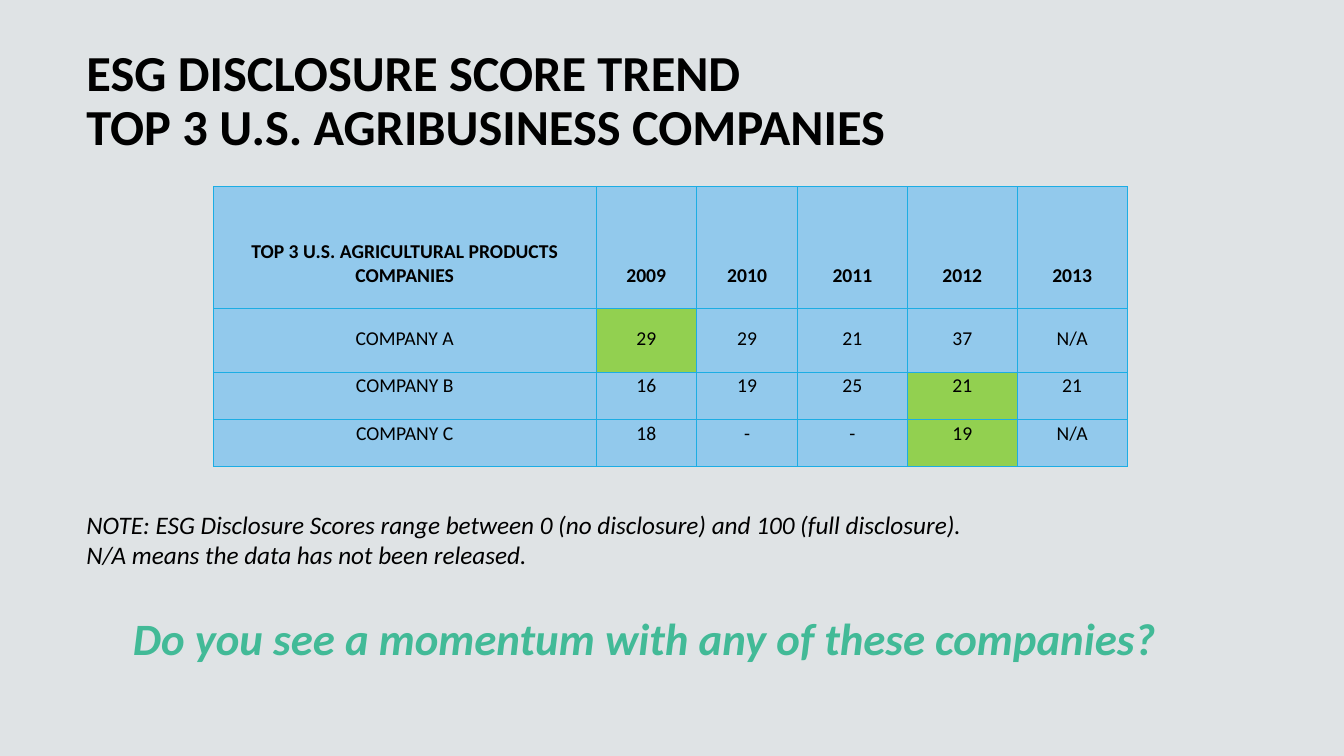
from dataclasses import dataclass

from lxml.etree import SubElement
from pptx import Presentation
from pptx.dml.color import RGBColor
from pptx.enum.text import MSO_ANCHOR, PP_ALIGN
from pptx.oxml.ns import qn
from pptx.util import Inches, Pt


@dataclass(frozen=True)
class Theme:
    font: str = "Calibri"
    background: str = "DFE3E5"
    ink: str = "000000"
    accent: str = "42BA97"
    cell: str = "92C9EC"
    highlight: str = "92D050"
    border: str = "1CADE4"
    border_width: float = 0.5
    title_size: int = 36
    question_size: int = 32
    note_size: int = 18
    table_size: int = 14


THEME = Theme()
SCORES = [
    ["TOP 3 U.S. AGRICULTURAL PRODUCTS COMPANIES", "2009", "2010", "2011", "2012", "2013"],
    ["COMPANY A", "29", "29", "21", "37", "N/A"],
    ["COMPANY B", "16", "19", "25", "21", "21"],
    ["COMPANY C", "18", "-", "-", "19", "N/A"],
]
HIGHLIGHTS = {(1, 1), (2, 4), (3, 4)}
COLUMN_WIDTHS = [3.79, 1, 1, 1.09, 1.09, 1.09]
ROW_HEIGHTS = [1.21, 0.63, 0.47, 0.47]


def style_paragraph(para, size, color=THEME.ink, bold=False, italic=False, align=PP_ALIGN.LEFT):
    para.alignment = align
    para.font.name = THEME.font
    para.font.size = Pt(size)
    para.font.color.rgb = RGBColor.from_string(color)
    para.font.bold = bold
    para.font.italic = italic


def add_text(page, box, text, size, anchor=MSO_ANCHOR.TOP, line_spacing=None, **style):
    frame = page.shapes.add_textbox(*map(Inches, box)).text_frame
    frame.word_wrap = True
    frame.vertical_anchor = anchor
    frame.text = text
    for para in frame.paragraphs:
        para.line_spacing = line_spacing
        style_paragraph(para, size, **style)


def add_title(page, box):
    add_text(page, box, "ESG DISCLOSURE SCORE TREND\vTOP 3 U.S. AGRIBUSINESS COMPANIES",
             THEME.title_size, MSO_ANCHOR.MIDDLE, 0.9, bold=True)


def add_note(page, box):
    add_text(page, box,
             "NOTE: ESG Disclosure Scores range between 0 (no disclosure) and 100 (full disclosure).\n"
             "N/A means the data has not been released.",
             THEME.note_size, italic=True)


def add_question(page, box):
    add_text(page, box, "Do you see a momentum with any of these companies?",
             THEME.question_size, color=THEME.accent, bold=True, italic=True, align=PP_ALIGN.CENTER)


def style_cell(cell, text, fill, bold):
    cell.text = text
    cell.vertical_anchor = MSO_ANCHOR.BOTTOM
    cell.margin_left = cell.margin_right = cell.margin_top = Inches(0.01)
    cell.margin_bottom = Inches(0.21)
    style_paragraph(cell.text_frame.paragraphs[0], THEME.table_size, bold=bold, align=PP_ALIGN.CENTER)
    properties = cell._tc.get_or_add_tcPr()
    for side in ("a:lnL", "a:lnR", "a:lnT", "a:lnB"):
        line = SubElement(properties, qn(side), w=str(Pt(THEME.border_width)))
        SubElement(SubElement(line, qn("a:solidFill")), qn("a:srgbClr"), val=THEME.border)
    cell.fill.solid()
    cell.fill.fore_color.rgb = RGBColor.from_string(fill)


def add_score_table(page, box):
    table = page.shapes.add_table(len(SCORES), len(SCORES[0]), *map(Inches, box)).table
    for column, width in zip(table.columns, COLUMN_WIDTHS):
        column.width = Inches(width)
    for row, height in zip(table.rows, ROW_HEIGHTS):
        row.height = Inches(height)
    for row_index, values in enumerate(SCORES):
        for column_index, text in enumerate(values):
            position = (row_index, column_index)
            fill = THEME.highlight if position in HIGHLIGHTS else THEME.cell
            style_cell(table.cell(*position), text, fill, bold=row_index == 0)


def main():
    deck = Presentation()
    deck.slide_width, deck.slide_height = Inches(13.33), Inches(7.5)
    page = deck.slides.add_slide(deck.slide_layouts[6])
    page.background.fill.solid()
    page.background.fill.fore_color.rgb = RGBColor.from_string(THEME.background)
    add_title(page, (0.76, 0.18, 11.66, 1.67))
    add_score_table(page, (2.12, 1.85, sum(COLUMN_WIDTHS), sum(ROW_HEIGHTS)))
    add_question(page, (0.87, 6.01, 11.05, 0.64))
    add_note(page, (0.76, 5, 11.93, 0.71))
    deck.save("out.pptx")


if __name__ == "__main__":
    main()
